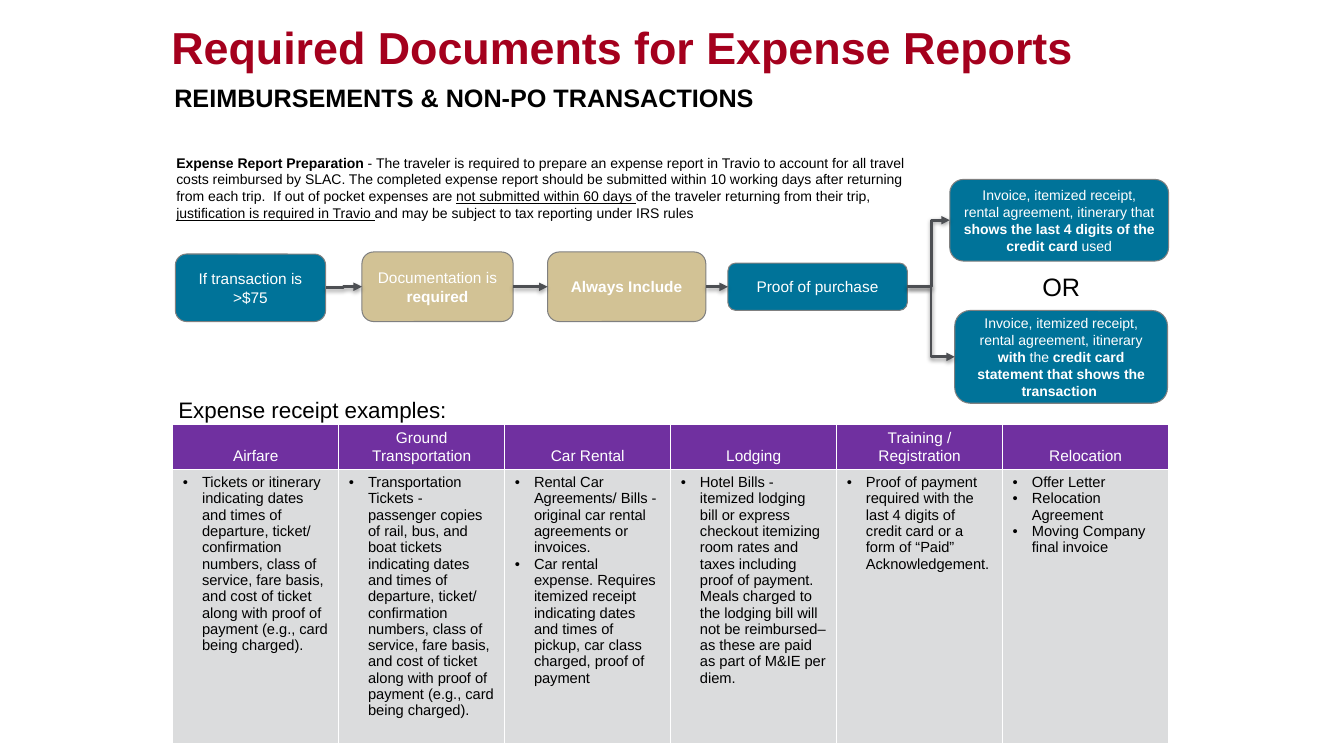
from dataclasses import dataclass
from lxml import etree
from pptx import Presentation
from pptx.dml.color import RGBColor
from pptx.enum import shapes, text
from pptx.oxml import ns
from pptx.util import Emu, Inches, Pt

FONT = "Arial"
WHITE, BLACK, RED = "FFFFFF", "000000", "A4001D"
TEAL, SAND, GREY, DARK = "007399", "D2C295", "808080", "4D4F53"
PURPLE, PALE = "7030A0", "DBDCDD"
CENTER, LEFT = text.PP_ALIGN.CENTER, text.PP_ALIGN.LEFT

prs = Presentation()
prs.slide_width, prs.slide_height = Inches(13.33), Inches(7.5)
slide = prs.slides.add_slide(prs.slide_layouts[6])


@dataclass
class Area:
    """Position and size in percent of the slide."""
    x: float
    y: float
    w: float
    h: float

    def emu(self) -> tuple:
        return across(self.x), down(self.y), across(self.w), down(self.h)


@dataclass
class Run:
    text: str
    bold: bool = False
    underline: bool = False


@dataclass
class Label:
    area: Area
    runs: list
    size: float
    color: str = BLACK
    wrap: bool = True
    inset: float = 0.1
    anchor: text.MSO_ANCHOR = text.MSO_ANCHOR.TOP


@dataclass
class Step:
    area: Area
    runs: list
    fill: str
    size: float = 11


@dataclass
class Receipt:
    heading: str
    items: list


def across(percent: float) -> Emu:
    return Emu(round(prs.slide_width * percent / 100))


def down(percent: float) -> Emu:
    return Emu(round(prs.slide_height * percent / 100))


def rgb(color: str) -> RGBColor:
    return RGBColor.from_string(color)


def style(font, size: float, color: str) -> None:
    font.name, font.size = FONT, Pt(size)
    font.color.rgb = rgb(color)


def write(p, runs: list, size: float, color: str, align=LEFT) -> None:
    p.alignment = align
    for run in runs:
        r = p.add_run()
        r.text = run.text
        style(r.font, size, color)
        r.font.bold, r.font.underline = run.bold, run.underline


def add_label(label: Label) -> None:
    tf = slide.shapes.add_textbox(*label.area.emu()).text_frame
    tf.word_wrap, tf.vertical_anchor = label.wrap, label.anchor
    tf.margin_left = tf.margin_right = Inches(label.inset)
    tf.margin_top = tf.margin_bottom = Inches(label.inset / 2)
    write(tf.paragraphs[0], label.runs, label.size, label.color)


def add_step(step: Step):
    sp = slide.shapes.add_shape(shapes.MSO_SHAPE.ROUNDED_RECTANGLE, *step.area.emu())
    sp.shadow.inherit = False
    sp.fill.solid()
    sp.fill.fore_color.rgb = rgb(step.fill)
    sp.line.color.rgb, sp.line.width = rgb(GREY), Pt(0.75)
    tf = sp.text_frame
    tf.word_wrap, tf.vertical_anchor = True, text.MSO_ANCHOR.MIDDLE
    write(tf.paragraphs[0], step.runs, step.size, WHITE, CENTER)
    return sp


def add_arrow(start, end, bend: float) -> None:
    """Join the right side of one step to the left side of another."""
    c = slide.shapes.add_connector(shapes.MSO_CONNECTOR.ELBOW, 0, 0, 0, 0)
    c.begin_connect(start, 3)
    c.end_connect(end, 1)
    c.line.color.rgb, c.line.width = rgb(DARK), Pt(2)
    etree.SubElement(c.line._get_or_add_ln(), ns.qn("a:tailEnd"), type="triangle")
    sppr = c._element.spPr
    guides = sppr.find(ns.qn("a:prstGeom")).get_or_add_avLst()
    etree.SubElement(guides, ns.qn("a:gd"), name="adj1", fmla=f"val {round(bend * 100000)}")
    effects = etree.SubElement(sppr, ns.qn("a:effectLst"))
    shadow = etree.SubElement(effects, ns.qn("a:outerShdw"), blurRad=str(Pt(3.1)),
                              dist=str(Pt(1.6)), dir="5400000", rotWithShape="0")
    tint = etree.SubElement(shadow, ns.qn("a:srgbClr"), val=BLACK)
    etree.SubElement(tint, ns.qn("a:alpha"), val="38000")


def paint_cell(cell, fill: str) -> None:
    tcpr = cell._tc.get_or_add_tcPr()
    for side in ("lnL", "lnR", "lnT", "lnB"):
        ln = etree.SubElement(tcpr, ns.qn(f"a:{side}"), w=str(Pt(1)))
        solid = etree.SubElement(ln, ns.qn("a:solidFill"))
        etree.SubElement(solid, ns.qn("a:srgbClr"), val=WHITE)
    cell.fill.solid()
    cell.fill.fore_color.rgb = rgb(fill)


def add_bullet(p) -> None:
    ppr = p._p.get_or_add_pPr()
    ppr.set("marL", str(Inches(0.19)))
    ppr.set("indent", str(-Inches(0.19)))
    etree.SubElement(ppr, ns.qn("a:buFont"), typeface=FONT)
    etree.SubElement(ppr, ns.qn("a:buChar"), char="•")


def add_receipts(receipts: list, x: float, y: float, col: float, rows: tuple) -> None:
    area = Area(x, y, col * len(receipts), sum(rows))
    table = slide.shapes.add_table(len(rows), len(receipts), *area.emu()).table
    for row, height in zip(table.rows, rows):
        row.height = down(height)
    for i, receipt in enumerate(receipts):
        table.columns[i].width = across(col)
        head, body = table.cell(0, i), table.cell(1, i)
        paint_cell(head, PURPLE)
        paint_cell(body, PALE)
        head.vertical_anchor = text.MSO_ANCHOR.BOTTOM
        write(head.text_frame.paragraphs[0], [Run(receipt.heading)], 11, WHITE, CENTER)
        body.text_frame.text = "\n".join(receipt.items)
        for p in body.text_frame.paragraphs:
            add_bullet(p)
            style(p.runs[0].font, 10.5, BLACK)


# Receipt table
add_receipts([
    Receipt("Airfare", ["Tickets or itinerary indicating dates and times of departure, ticket/ confirmation numbers, class of service, fare basis, and cost of ticket along with proof of payment (e.g., card being charged)."]),
    Receipt("Ground Transportation", ["Transportation Tickets - passenger copies of rail, bus, and boat tickets indicating dates and times of departure, ticket/ confirmation numbers, class of service, fare basis, and cost of ticket along with proof of payment (e.g., card being charged)."]),
    Receipt("Car Rental", ["Rental Car Agreements/ Bills - original car rental agreements or invoices.",
                           "Car rental expense. Requires itemized receipt indicating dates and times of pickup, car class charged, proof of payment"]),
    Receipt("Lodging", ["Hotel Bills - itemized lodging bill or express checkout itemizing room rates and taxes including proof of payment. Meals charged to the lodging bill will not be reimbursed– as these are paid as part of M&IE per diem."]),
    Receipt("Training / Registration", ["Proof of payment required with the last 4 digits of credit card or a form of “Paid” Acknowledgement."]),
    Receipt("Relocation", ["Offer Letter", "Relocation Agreement", "Moving Company final invoice"]),
], x=12.86, y=56.2, col=12.35, rows=(5.73, 36.27))

# Headings and notes
for label in (
    Label(Area(12.75, -1.2, 70.14, 10.93), [Run("Required Documents for Expense Reports", True)],
          32, RED, inset=0, anchor=text.MSO_ANCHOR.BOTTOM),
    Label(Area(12.23, 10.27, 45.09, 5.33), [Run("REIMBURSEMENTS & NON-PO TRANSACTIONS", True)], 18, wrap=False),
    Label(Area(12.38, 19.73, 57.54, 10.27), [
        Run("Expense Report Preparation ", True),
        Run("- The traveler is required to prepare an expense report in Travio to account for all travel costs reimbursed by SLAC. The completed expense report should be submitted within 10 working days after returning from each trip.  If out of pocket expenses are "),
        Run("not submitted within 60 days ", underline=True),
        Run("of the traveler returning from their trip, "),
        Run("justification is required in Travio ", underline=True),
        Run("and may be subject to tax reporting under IRS rules")], 10),
    Label(Area(76.82, 35.2, 4.35, 5.33), [Run("OR")], 18, wrap=False),
    Label(Area(12.53, 51.73, 28.81, 4.93), [Run("Expense receipt examples:")], 16),
):
    add_label(label)

# Flow steps
transaction, documentation, include, proof, digits, statement = [add_step(step) for step in (
    Step(Area(13.05, 33.6, 11.18, 8.93), [Run("If transaction is >$75")], TEAL),
    Step(Area(26.93, 33.33, 11.25, 9.2), [Run("Documentation is "), Run("required", True)], SAND),
    Step(Area(40.74, 33.33, 11.78, 9.2), [Run("Always Include", True)], SAND),
    Step(Area(54.16, 34.8, 13.35, 6.27), [Run("Proof of purchase")], TEAL),
    Step(Area(70.67, 23.73, 16.28, 10.8), [
        Run("Invoice, itemized receipt, rental agreement, itinerary that "),
        Run("shows the last 4 digits of the credit card ", True), Run("used")], TEAL, 10),
    Step(Area(71.04, 41.07, 15.83, 12.27), [
        Run("Invoice, itemized receipt, rental agreement, itinerary "), Run("with", True), Run(" the "),
        Run("credit card statement that shows the transaction ", True)], TEAL, 10),
)]

# Arrows between steps
for start, end, bend in ((transaction, documentation, 0.5), (documentation, include, 0.5),
                         (include, proof, 0.5), (proof, digits, 0.57), (proof, statement, 0.5)):
    add_arrow(start, end, bend)

prs.save("out.pptx")
